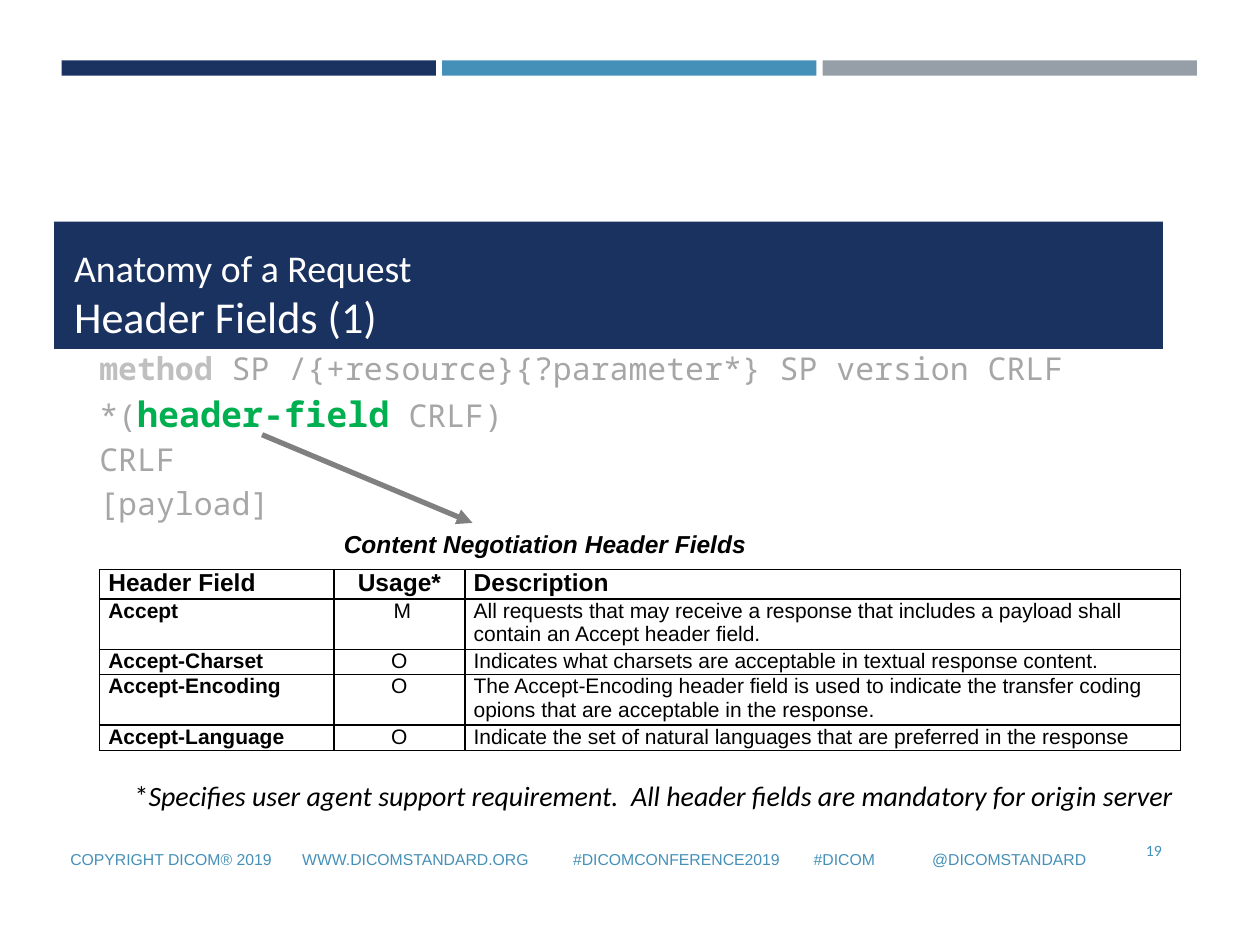
from lxml import etree
from pptx import Presentation
from pptx.dml.color import RGBColor
from pptx.enum.shapes import MSO_CONNECTOR as LINK, MSO_SHAPE as SHAPE
from pptx.enum.text import MSO_ANCHOR as ANCHOR, PP_ALIGN as ALIGN
from pptx.oxml.ns import qn
from pptx.util import Inches, Pt

NAVY = RGBColor(0x1A, 0x32, 0x60)
BLUE = RGBColor(0x45, 0x90, 0xB8)
SLATE = RGBColor(0x96, 0x9F, 0xA7)
GREEN = RGBColor(0x00, 0xB0, 0x50)
SILVER = RGBColor(0xBF, 0xBF, 0xBF)
ASH = RGBColor(0xA6, 0xA6, 0xA6)
GRAY = RGBColor(0x80, 0x80, 0x80)
BLACK = RGBColor(0, 0, 0)
WHITE = RGBColor(0xFF, 0xFF, 0xFF)
SANS, BODY, MONO = "Arial", "Calibri", "Noto Sans Mono"

HEAD = ["Header Field", "Usage*", "Description"]
ROWS = [
    ["Accept", " M", "All requests that may receive a response that includes "
     "a payload shall contain an Accept header field."],
    ["Accept-Charset", "O",
     "Indicates what charsets are acceptable in textual response content."],
    ["Accept-Encoding", "O", "The Accept-Encoding header field is used to indicate "
     "the transfer coding opions that are acceptable in the response."],
    ["Accept-Language", "O",
     "Indicate the set of natural languages that are preferred in the response"],
]
FOOT = ["COPYRIGHT DICOM® 2019", "WWW.DICOMSTANDARD.ORG",
        "#DICOMCONFERENCE2019", "#DICOM", "@DICOMSTANDARD"]
STOPS = [1.84, 3.99, 5.9, 6.84]


class Deck:
    def __init__(self, slide):
        self.slide = slide
        self.shapes = slide.shapes

    def font(self, font, size, name, color, bold=None, italic=None):
        font.size, font.name = Pt(size), name
        font.bold, font.italic = bold, italic
        font.color.rgb = color

    def bar(self, x, y, w, h, color):
        bar = self.shapes.add_shape(SHAPE.RECTANGLE, *map(Inches, (x, y, w, h)))
        bar.shadow.inherit = False
        bar.fill.solid()
        bar.fill.fore_color.rgb = color
        bar.line.fill.background()

    def frame(self, x, y, w, h, anchor=ANCHOR.TOP, wrap=True):
        box = self.shapes.add_textbox(*map(Inches, (x, y, w, h)))
        frame = box.text_frame
        frame.word_wrap = wrap
        frame.vertical_anchor = anchor
        return frame

    def label(self, x, y, w, h, text, style, align=ALIGN.LEFT, anchor=ANCHOR.TOP,
              wrap=True, stops=()):
        para = self.frame(x, y, w, h, anchor, wrap).paragraphs[0]
        para.text = text
        para.alignment = align
        if stops:
            tabs = etree.SubElement(para._p.get_or_add_pPr(), qn("a:tabLst"))
            for stop in stops:
                etree.SubElement(tabs, qn("a:tab"), pos=str(Inches(stop)), algn="l")
        self.font(para.font, *style)

    def runs(self, frame, lines, after=0, space=None):
        for i, line in enumerate(lines):
            para = frame.add_paragraph() if i else frame.paragraphs[0]
            para.space_after = Pt(after)
            para.line_spacing = space
            for text, *style in line:
                run = para.add_run()
                run.text = text
                self.font(run.font, *style)

    def arrow(self, x1, y1, x2, y2, color, width):
        link = self.shapes.add_connector(
            LINK.STRAIGHT, *map(Inches, (x1, y1, x2, y2)))
        link.line.color.rgb = color
        link.line.width = Pt(width)
        etree.SubElement(link.line._get_or_add_ln(), qn("a:tailEnd"), type="triangle")
        etree.SubElement(link._element.spPr, qn("a:effectLst"))

    def border(self, cell):
        props = cell._tc.get_or_add_tcPr()
        for side in "LRTB":
            edge = etree.SubElement(props, qn(f"a:ln{side}"), w=str(Pt(1)))
            fill = etree.SubElement(edge, qn("a:solidFill"))
            etree.SubElement(fill, qn("a:srgbClr"), val=str(BLACK))

    def table(self, x, y, cols, highs, rows):
        grid = self.shapes.add_table(
            len(rows), len(cols), Inches(x), Inches(y),
            Inches(sum(cols)), Inches(sum(highs))).table
        grid.first_row = grid.horz_banding = False
        for col, wide in zip(grid.columns, cols):
            col.width = Inches(wide)
        for r, (row, high) in enumerate(zip(rows, highs)):
            grid.rows[r].height = Inches(high)
            for c, text in enumerate(row):
                cell = grid.cell(r, c)
                self.border(cell)
                cell.fill.background()
                cell.margin_left = cell.margin_right = Inches(0.07)
                cell.margin_top = cell.margin_bottom = 0
                para = cell.text_frame.paragraphs[0]
                para.text = text
                para.alignment = ALIGN.CENTER if c == 1 else ALIGN.LEFT
                self.font(para.font, 12 if r else 14, SANS, BLACK, r == 0 or c == 0)


def main():
    prs = Presentation()
    prs.slide_width, prs.slide_height = Inches(10), Inches(7.5)
    deck = Deck(prs.slides.add_slide(prs.slide_layouts[6]))

    for i, color in enumerate([NAVY, BLUE, SLATE]):
        deck.bar(0.49 + 3.02 * i, 0.48, 2.97, 0.12, color)
    deck.bar(0.43, 1.76, 8.8, 1.01, NAVY)

    plain = (18, MONO, ASH)
    deck.runs(deck.frame(0.69, 2.76, 8, 1.5), [
        [("method ", 18, MONO, SILVER, True),
         ("SP /{+resource}{?parameter*} SP version CRLF", *plain)],
        [("*(", *plain), ("header-field", 20, MONO, GREEN, True), (" CRLF)", *plain)],
        [("CRLF", *plain)],
        [("[payload]", *plain)],
    ], 6, 0.88)
    deck.runs(deck.frame(0.49, 1.86, 8.74, 0.91, ANCHOR.BOTTOM), [
        [("Anatomy of a Request", 21.6, BODY, WHITE)],
        [("Header Fields (1)", 25.2, BODY, WHITE)],
    ])

    deck.arrow(2.08, 3.45, 3.75, 4.15, GRAY, 3)
    deck.table(0.79, 4.52, [1.86, 1.04, 5.68], [0.22, 0.37, 0.19, 0.37, 0.19],
               [HEAD, *ROWS])
    deck.label(2.63, 4.15, 3.41, 0.34, "Content Negotiation Header Fields",
               (14, SANS, BLACK, True, True), wrap=False)

    deck.label(0.46, 6.62, 8.46, 0.39, "\t".join(FOOT), (9, SANS, BLUE),
               anchor=ANCHOR.MIDDLE, stops=STOPS)
    deck.label(8.89, 6.51, 0.43, 0.47, "19", (9, BODY, BLUE),
               ALIGN.RIGHT, ANCHOR.MIDDLE)
    deck.runs(deck.frame(0.97, 6.13, 8.52, 0.37), [
        [("*", 16, BODY, BLACK),
         ("Specifies user agent support requirement.  All header fields are "
          "mandatory for origin server", 16, BODY, BLACK, None, True)],
    ])
    prs.save("out.pptx")


if __name__ == "__main__":
    main()
